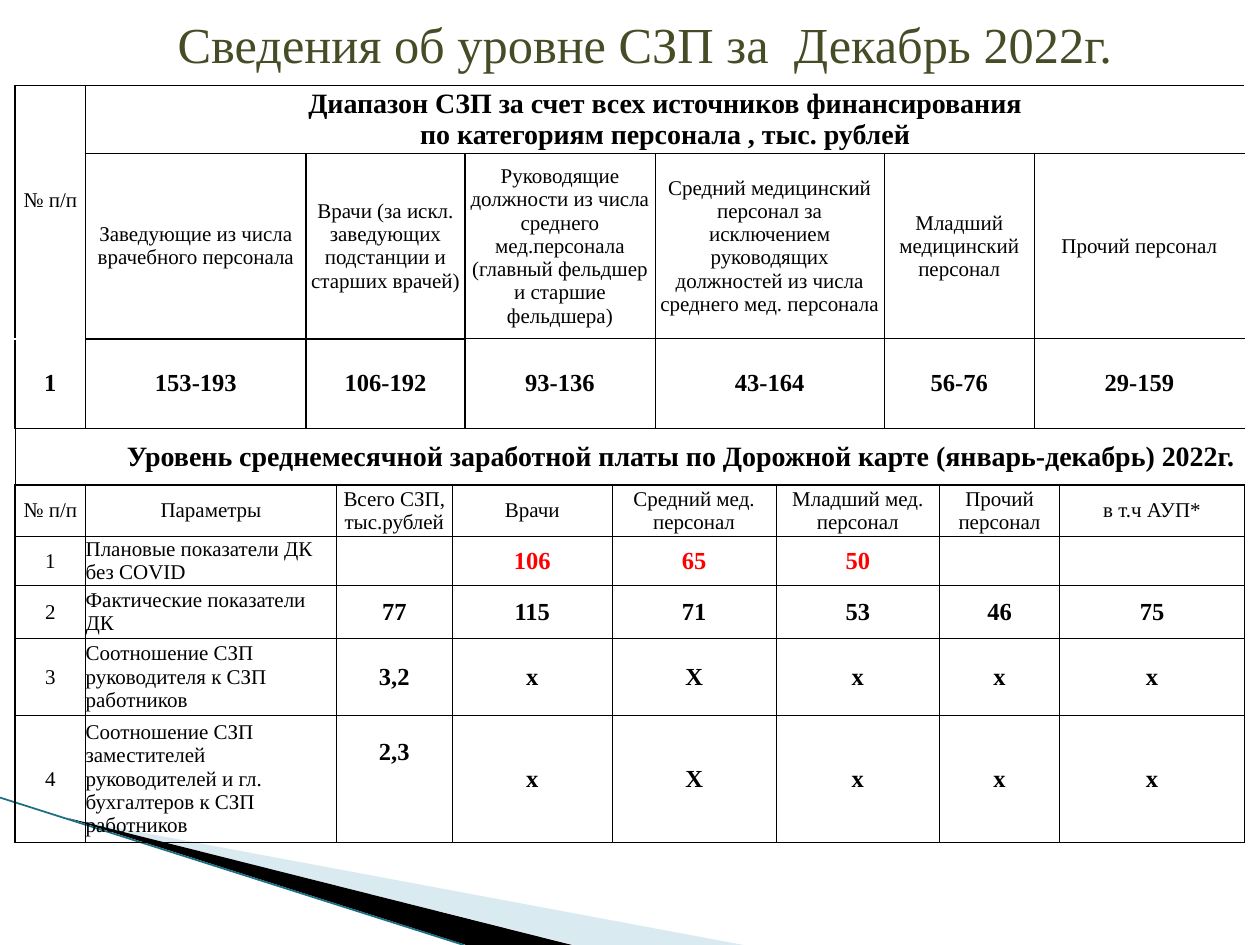
"""Build a slide with salary ranges and road-map salary levels by staff category."""
from dataclasses import dataclass, field
from itertools import pairwise, product

from lxml.etree import SubElement
from pptx import Presentation
from pptx.dml.color import RGBColor
from pptx.enum.shapes import MSO_CONNECTOR as Connector
from pptx.enum.text import MSO_ANCHOR as Anchor, MSO_AUTO_SIZE as AutoSize, PP_ALIGN as Align
from pptx.oxml.ns import qn
from pptx.util import Inches, Pt


@dataclass(frozen=True)
class Theme:
    """Colours, font and type sizes of the slide."""
    font: str = "Times New Roman"
    ink: str = "000000"
    title: str = "444D26"
    target: str = "FF0000"
    pale: str = "A0CBDC"
    edge: str = "1B6F85"
    title_size: float = 28.8
    heading_size: float = 16
    value_size: float = 14
    label_size: float = 12
    thin: float = 0.5
    thick: float = 1


THEME = Theme()


@dataclass(frozen=True)
class Style:
    """Type format of a table cell."""
    size: float = THEME.label_size
    bold: bool = False
    color: str = THEME.ink
    align: Align = Align.CENTER


LABEL = Style()
PARAMETER = Style(align=Align.LEFT)
HEADING = Style(THEME.heading_size, True)
VALUE = Style(THEME.value_size, True)
TARGET = Style(THEME.value_size, True, THEME.target)


@dataclass(frozen=True)
class Entry:
    """A table cell with its text, style, grid place and extra margins."""
    text: str
    style: Style
    row: int
    start: int
    stop: int
    rows: int = 1
    margins: dict = field(default_factory=dict)


@dataclass(frozen=True)
class Wedge:
    """A filled corner outline."""
    points: tuple
    color: str
    alpha: int


COLUMNS = (0.56, 1.75, 0.24, 0.92, 0.1, 1.17, 0.34, 0.96, 0.86, 0.44, 0.75, 0.2, 1.47)
ROWS = (0.54, 1.47, 0.71, 0.45, 0.41, 0.39, 0.42, 0.61, 1.01)
RANGE_STOPS = (0, 1, 2, 5, 7, 9, 11, 13)
LEVEL_STOPS = (0, 1, 3, 4, 6, 8, 10, 12, 13)
CATEGORIES = (
    "Заведующие из числа врачебного персонала",
    "Врачи (за искл. заведующих подстанции и старших врачей)",
    "Руководящие должности из числа среднего мед.персонала (главный фельдшер и старшие фельдшера)",
    "Средний медицинский персонал за исключением руководящих должностей из числа среднего мед. персонала",
    "Младший медицинский персонал",
    "Прочий персонал",
)
RANGES = ("1", "153-193", "106-192", "93-136", "43-164", "56-76", "29-159")
LEVEL_HEADS = ("№ п/п", "Параметры", "Всего СЗП, тыс.рублей", "Врачи", "Средний мед. персонал",
               "Младший мед. персонал", "Прочий персонал", "в т.ч АУП*")
LEVELS = (
    ("1", "Плановые показатели ДК без COVID", "", "106", "65", "50", "", ""),
    ("2", "Фактические показатели ДК", "77", "115", "71", "53", "46", "75"),
    ("3", "Соотношение СЗП руководителя к СЗП работников", "3,2", "х", "Х", "х", "х", "х"),
    ("4", "Соотношение СЗП заместителей руководителей и гл. бухгалтеров к СЗП работников",
     "2,3", "х", "Х", "х", "х", "х"),
)
WEDGES = (
    Wedge(((0.55, 6.5), (5.9, 7.5), (4.56, 7.5)), THEME.pale, 40),
    Wedge(((0.53, 6.49), (4.54, 7.5), (3.7, 7.5)), THEME.ink, 100),
)
THICK_LEVELS = {0, 3, 4, 9}
THICK_SIDES = {(1, 2), (2, 2)}


def apply(target, formats: dict) -> None:
    """Set every attribute named in the format values."""
    for name, value in formats.items():
        setattr(target, name, value)


def line_up(row: int, stops: tuple, texts: tuple, styles: list) -> list[Entry]:
    """Place one row of texts between neighbouring column stops."""
    return [Entry(text, style, row, start, stop)
            for text, style, (start, stop) in zip(texts, styles, pairwise(stops))]


def table_entries() -> list[Entry]:
    """List all cells of the table."""
    entries = [
        Entry("№ п/п", LABEL, 0, 0, 1, 2, {"margin_bottom": Inches(0.19)}),
        Entry("Диапазон СЗП за счет всех источников финансирования\n"
              "по категориям персонала , тыс. рублей", HEADING, 0, 1, 13),
        *line_up(1, RANGE_STOPS[1:], CATEGORIES, [LABEL] * 6),
        *line_up(2, RANGE_STOPS, RANGES, [VALUE] * 7),
        Entry("Уровень среднемесячной заработной платы по Дорожной карте (январь-декабрь) 2022г.",
              HEADING, 3, 0, 13, 1, {"margin_left": Inches(0.81)}),
        *line_up(4, LEVEL_STOPS, LEVEL_HEADS, [LABEL] * 8),
    ]
    for row, texts in enumerate(LEVELS, 5):
        figures = TARGET if row == 5 else VALUE
        entries += line_up(row, LEVEL_STOPS, texts, [LABEL, PARAMETER] + [figures] * 6)
    return entries


def across_width(level: int, column: int) -> float:
    """Give the weight of a horizontal rule above a grid row."""
    heavy = level in THICK_LEVELS or (level == 2 and 1 <= column < 5)
    return THEME.thick if heavy else THEME.thin


def upright_width(row: int, side: int) -> float:
    """Give the weight of a vertical rule left of a grid column."""
    if row == 3:
        return 0 if side == len(COLUMNS) else THEME.thin
    heavy = side == 0 or (side == len(COLUMNS) and row != 2) or (row, side) in THICK_SIDES
    return THEME.thick if heavy else THEME.thin


def draw_border(cell, side: str, width: float) -> None:
    """Add one border to a cell."""
    line = SubElement(cell._tc.get_or_add_tcPr(), qn(f"a:ln{side}"), w=str(Pt(width)))
    if width:
        fill = SubElement(line, qn("a:solidFill"))
        SubElement(fill, qn("a:srgbClr"), val=THEME.ink)
    else:
        SubElement(line, qn("a:noFill"))


def draw_entry(table, entry: Entry) -> None:
    """Merge, rule and fill in one cell."""
    bottom = entry.row + entry.rows
    for row, column in product(range(entry.row, bottom), range(entry.start, entry.stop)):
        part = table.cell(row, column)
        if column == entry.start:
            draw_border(part, "L", upright_width(row, column))
        if column == entry.stop - 1:
            draw_border(part, "R", upright_width(row, entry.stop))
        if row == entry.row:
            draw_border(part, "T", across_width(row, column))
        if row == bottom - 1:
            draw_border(part, "B", across_width(bottom, column))
        part.fill.background()
    cell = table.cell(entry.row, entry.start)
    if entry.rows > 1 or entry.stop - entry.start > 1:
        cell.merge(table.cell(bottom - 1, entry.stop - 1))
    cell.text = entry.text
    raised = {"margin_bottom": Inches(0.43)} if entry.text == "2,3" else {}
    apply(cell, {"margin_left": 0, "margin_right": 0, "margin_top": 0, "margin_bottom": 0,
                 "vertical_anchor": Anchor.MIDDLE} | entry.margins | raised)
    style = entry.style
    for para in cell.text_frame.paragraphs:
        para.alignment = style.align
        apply(para.font, {"name": THEME.font, "size": Pt(style.size), "bold": style.bold})
        para.font.color.rgb = RGBColor.from_string(style.color)
        for span in para.runs:
            apply(span.font, {"name": THEME.font, "size": Pt(style.size), "bold": style.bold})
            span.font.color.rgb = RGBColor.from_string(style.color)


def draw_table(page) -> None:
    """Draw the table of salary ranges and levels."""
    frame = page.shapes.add_table(len(ROWS), len(COLUMNS), Inches(0.12), Inches(0.68),
                                  Inches(sum(COLUMNS)), Inches(sum(ROWS)))
    table = frame.table
    apply(table, {"first_row": False, "horz_banding": False})
    for column, width in zip(table.columns, COLUMNS):
        column.width = Inches(width)
    for row, height in zip(table.rows, ROWS):
        row.height = Inches(height)
    for entry in table_entries():
        draw_entry(table, entry)


def draw_wedge(page, wedge: Wedge) -> None:
    """Draw one corner wedge."""
    first, *others = [(Inches(x), Inches(y)) for x, y in wedge.points]
    builder = page.shapes.build_freeform(*first)
    builder.add_line_segments(others, close=True)
    shape = builder.convert_to_shape()
    shape.shadow.inherit = False
    shape.fill.solid()
    shape.fill.fore_color.rgb = RGBColor.from_string(wedge.color)
    shape.line.fill.background()
    if wedge.alpha < 100:
        color = shape.fill._xPr.find(f".//{qn('a:srgbClr')}")
        SubElement(color, qn("a:alpha"), val=str(wedge.alpha * 1000))


def draw_edge(page) -> None:
    """Draw the slanting line along the wedges."""
    edge = page.shapes.add_connector(Connector.STRAIGHT, Inches(0), Inches(6.33),
                                     Inches(3.68), Inches(7.5))
    edge.line.width = Pt(THEME.thick)
    edge.line.color.rgb = RGBColor.from_string(THEME.edge)
    SubElement(edge._element.spPr, qn("a:effectLst"))


def draw_title(page) -> None:
    """Place and format the title."""
    title = page.shapes.title
    apply(title, {"left": Inches(0.51), "top": Inches(0.04),
                  "width": Inches(9), "height": Inches(0.61)})
    title.text = "Сведения об уровне СЗП за  Декабрь 2022г."
    apply(title.text_frame, {"vertical_anchor": Anchor.MIDDLE, "margin_left": Inches(0.9),
                             "auto_size": AutoSize.NONE, "word_wrap": True})
    para = title.text_frame.paragraphs[0]
    para.alignment = Align.LEFT
    font = para.runs[0].font
    apply(font, {"name": THEME.font, "size": Pt(THEME.title_size), "bold": False})
    font.color.rgb = RGBColor.from_string(THEME.title)


def main() -> None:
    """Build and save the deck."""
    deck = Presentation()
    apply(deck, {"slide_width": Inches(10), "slide_height": Inches(7.5)})
    page = deck.slides.add_slide(deck.slide_layouts[5])
    for wedge in WEDGES:
        draw_wedge(page, wedge)
    draw_edge(page)
    draw_table(page)
    draw_title(page)
    deck.save("out.pptx")


if __name__ == "__main__":
    main()
